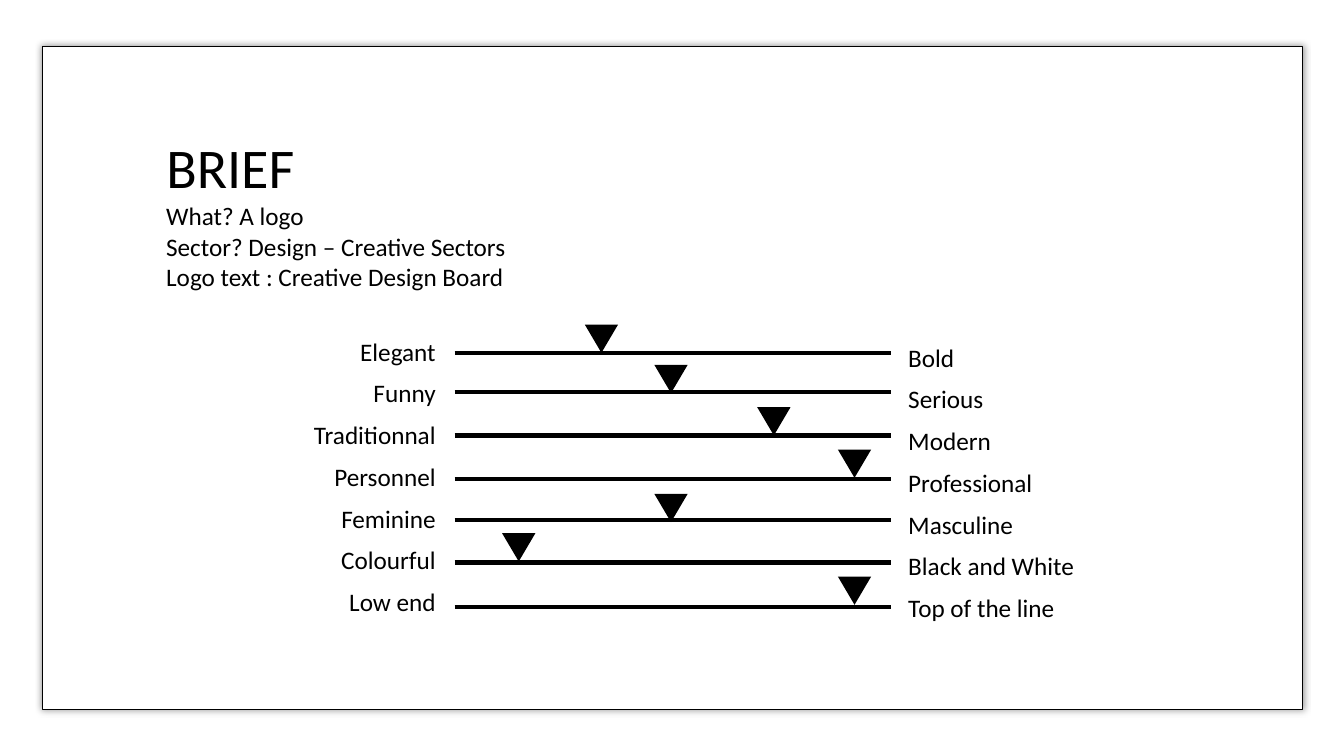
"""Build a design brief slide with seven opposing-trait sliders."""
from dataclasses import dataclass

from lxml.etree import SubElement
from pptx import Presentation
from pptx.dml.color import RGBColor
from pptx.enum.shapes import MSO_CONNECTOR as CONNECTOR, MSO_SHAPE as SHAPE
from pptx.enum.text import MSO_ANCHOR as ANCHOR, MSO_AUTO_SIZE as AUTO_SIZE, PP_ALIGN as ALIGN
from pptx.oxml import parse_xml
from pptx.oxml.ns import nsdecls, qn
from pptx.util import Inches, Pt


@dataclass(frozen=True)
class Theme:
    ink: RGBColor = RGBColor(0, 0, 0)
    paper: RGBColor = RGBColor(255, 255, 255)
    font: str = "Calibri"
    title: Pt = Pt(40)
    body: Pt = Pt(18)
    row_spacing: Pt = Pt(29.8)


THEME = Theme()


def write(shape, lines, size, align=ALIGN.LEFT, spacing=None):
    frame = shape.text_frame
    frame.word_wrap = True
    frame.auto_size = AUTO_SIZE.SHAPE_TO_FIT_TEXT
    frame.vertical_anchor = ANCHOR.TOP
    for index, line in enumerate(lines):
        paragraph = frame.add_paragraph() if index else frame.paragraphs[0]
        paragraph.alignment = align
        paragraph.line_spacing = spacing
        run = paragraph.add_run()
        run.text = line
        run.font.name = THEME.font
        run.font.size = size
        run.font.color.rgb = THEME.ink
    return frame


prs = Presentation()
prs.slide_width, prs.slide_height = Inches(13.33), Inches(7.5)
slide = prs.slides.add_slide(prs.slide_layouts[5])

card = slide.shapes.add_shape(SHAPE.RECTANGLE, Inches(0.42), Inches(0.46), Inches(12.5), Inches(6.58))
card.fill.solid()
card.fill.fore_color.rgb = THEME.paper
card.line.color.rgb = THEME.ink
card.line.width = Pt(1)
card._element.spPr.append(parse_xml(
    f'<a:effectLst {nsdecls("a")}><a:outerShdw blurRad="{Pt(5)}" dist="0" dir="0">'
    f'<a:srgbClr val="{THEME.ink}"><a:alpha val="40000"/></a:srgbClr>'
    '</a:outerShdw></a:effectLst>'))
slide.shapes._spTree.insert(2, card._element)

title = slide.shapes.title
title.left, title.top, title.width, title.height = Inches(1.55), Inches(1.26), Inches(10.23), Inches(0.73)
write(title, ["BRIEF"], THEME.title).margin_bottom = 0

details = slide.shapes.add_textbox(Inches(1.55), Inches(1.99), Inches(10.23), Inches(0.95))
write(details, ["What? A logo", "Sector? Design – Creative Sectors",
                "Logo text : Creative Design Board"], THEME.body).margin_top = 0

traits = [
    ("Elegant", "Bold", 5.8, 3.22, 3.5),
    ("Funny", "Serious", 6.49, 3.62, 3.89),
    ("Traditionnal", "Modern", 7.51, 4.04, 4.32),
    ("Personnel", "Professional", 8.31, 4.46, 4.75),
    ("Feminine", "Masculine", 6.49, 4.9, 5.16),
    ("Colourful", "Black and White", 4.98, 5.29, 5.58),
    ("Low end", "Top of the line", 8.31, 5.72, 6.02),
]
left_traits, right_traits, *_ = zip(*traits)
sliders = slide.shapes.add_group_shape().shapes

for names, left, top, align in [(left_traits, 1.22, 3.17, ALIGN.RIGHT),
                                (right_traits, 8.91, 3.23, ALIGN.LEFT)]:
    labels = sliders.add_textbox(Inches(left), Inches(top), Inches(3.2), Inches(3.01))
    write(labels, names, THEME.body, align, THEME.row_spacing)

for _, _, marker_left, marker_top, track_y in traits:
    marker = sliders.add_shape(SHAPE.ISOSCELES_TRIANGLE, Inches(marker_left), Inches(marker_top),
                               Inches(0.33), Inches(0.28))
    marker.rotation = 180
    marker.fill.solid()
    marker.fill.fore_color.rgb = THEME.ink
    marker.line.fill.background()
    marker.shadow.inherit = False

    track = sliders.add_connector(CONNECTOR.STRAIGHT, Inches(4.51), Inches(track_y),
                                  Inches(8.84), Inches(track_y))
    track.line.color.rgb = THEME.ink
    track.line.width = Pt(3)
    SubElement(track._element.spPr, qn("a:effectLst"))

prs.save("out.pptx")
